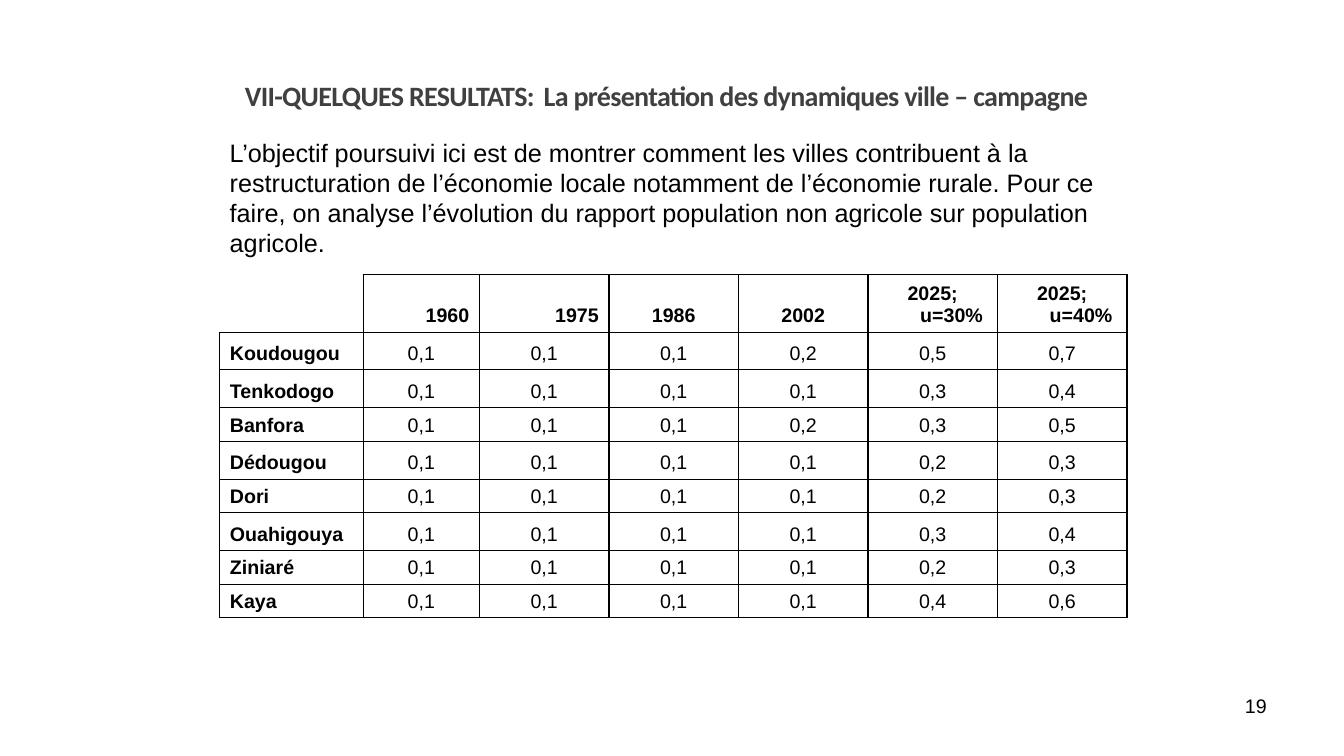
from pptx import Presentation
from pptx.dml.color import RGBColor
from pptx.enum import text as t
from pptx.oxml.xmlchemy import OxmlElement
from pptx.util import Pt

BLACK = RGBColor(0, 0, 0)
GREY = RGBColor(0x40, 0x40, 0x40)
LEFT, MID, RIGHT = t.PP_ALIGN.LEFT, t.PP_ALIGN.CENTER, t.PP_ALIGN.RIGHT

HEAD = {"name": "Calibri", "size": Pt(20), "bold": True}
GAP = {"name": "Arial", "size": Pt(24), "bold": True}
BODY = {"name": "Arial", "size": Pt(18)}
SMALL = {"name": "Arial", "size": Pt(14)}
STRONG = {**SMALL, "bold": True}

INTRO = ("L’objectif poursuivi ici est de montrer comment les villes contribuent "
         "à la restructuration de l’économie locale notamment de l’économie rurale. "
         "Pour ce faire, on analyse l’évolution du rapport population non agricole "
         "sur population agricole.")

YEARS = ["1960", "1975", "1986", "2002", "2025; u=30%", "2025; u=40%"]
ALIGNS = [RIGHT, RIGHT, MID, MID, MID, MID]
# Town, row height, one value per year
TOWNS = [
    ("Koudougou", 27, "0,1 0,1 0,1 0,2 0,5 0,7"),
    ("Tenkodogo", 27, "0,1 0,1 0,1 0,1 0,3 0,4"),
    ("Banfora", 24, "0,1 0,1 0,1 0,2 0,3 0,5"),
    ("Dédougou", 27, "0,1 0,1 0,1 0,1 0,2 0,3"),
    ("Dori", 24, "0,1 0,1 0,1 0,1 0,2 0,3"),
    ("Ouahigouya", 27, "0,1 0,1 0,1 0,1 0,3 0,4"),
    ("Ziniaré", 24, "0,1 0,1 0,1 0,1 0,2 0,3"),
    ("Kaya", 24, "0,1 0,1 0,1 0,1 0,4 0,6"),
]
COLS = [102.5, 83] + [92.5] * 5
TOP_ROW = 41
SIDES = ["L", "R", "T", "B"]


def add_run(para, words, style, color=BLACK, track=0):
    run = para.add_run()
    run.text = words
    for key, val in style.items():
        setattr(run.font, key, val)
    run.font.color.rgb = color
    if track:
        run.font._element.set("spc", str(track))


def add_text(slide, box, runs, align=LEFT, anchor=t.MSO_ANCHOR.TOP):
    frame = slide.shapes.add_textbox(*map(Pt, box)).text_frame
    frame.word_wrap = True
    frame.vertical_anchor = anchor
    para = frame.paragraphs[0]
    para.alignment = align
    for run in runs:
        add_run(para, *run)


def add_child(node, tag, **attrs):
    child = OxmlElement(tag)
    for key, val in attrs.items():
        child.set(key, val)
    node.append(child)
    return child


def set_edges(cell, shown):
    # Borders must come before the fill in the cell properties
    props = cell._tc.get_or_add_tcPr()
    for side in SIDES:
        line = add_child(props, "a:ln" + side, w=str(Pt(1)))
        if side in shown:
            fill = add_child(line, "a:solidFill")
            add_child(fill, "a:srgbClr", val=str(BLACK))
        else:
            add_child(line, "a:noFill")
    cell.fill.background()


def fill_cell(cell, words, style, align):
    set_edges(cell, SIDES)
    cell.vertical_anchor = t.MSO_ANCHOR.BOTTOM
    para = cell.text_frame.paragraphs[0]
    para.alignment = align
    # Hanging indent
    props = para._p.get_or_add_pPr()
    props.set("marL", str(Pt(27)))
    props.set("indent", str(Pt(-27)))
    add_run(para, words, style)


def add_grid(slide, left, top):
    highs = [TOP_ROW] + [high for _, high, _ in TOWNS]
    size = (left, top, sum(COLS), sum(highs))
    grid = slide.shapes.add_table(len(highs), len(COLS), *map(Pt, size)).table
    grid.first_row = grid.horz_banding = False
    for col, wide in zip(grid.columns, COLS):
        col.width = Pt(wide)
    for row, high in zip(grid.rows, highs):
        row.height = Pt(high)

    # Header row, with an open corner
    set_edges(grid.cell(0, 0), ["R", "B"])
    for c, (year, align) in enumerate(zip(YEARS, ALIGNS), 1):
        fill_cell(grid.cell(0, c), year, STRONG, align)

    # One row per town
    for r, (town, _, vals) in enumerate(TOWNS, 1):
        fill_cell(grid.cell(r, 0), town, STRONG, LEFT)
        for c, val in enumerate(vals.split(), 1):
            fill_cell(grid.cell(r, c), val, SMALL, MID)


def main():
    deck = Presentation()
    deck.slide_width, deck.slide_height = Pt(960), Pt(540)
    slide = deck.slides.add_slide(deck.slide_layouts[6])

    # Page number
    add_text(slide, (688, 492, 224, 37), [("19", SMALL)], RIGHT)
    # Title
    add_text(slide, (48, 21.6, 864, 90), [
        ("VII-QUELQUES RESULTATS:", HEAD, GREY, -50),
        (" ", GAP),
        ("La présentation des dynamiques ville – campagne\u00a0 ", HEAD, GREY, -50),
    ], MID, t.MSO_ANCHOR.MIDDLE)
    # Table
    add_grid(slide, 157, 196.25)
    # Introduction
    add_text(slide, (157, 94.3, 646.5, 93.6), [(INTRO, BODY)])

    deck.save("out.pptx")


if __name__ == "__main__":
    main()
